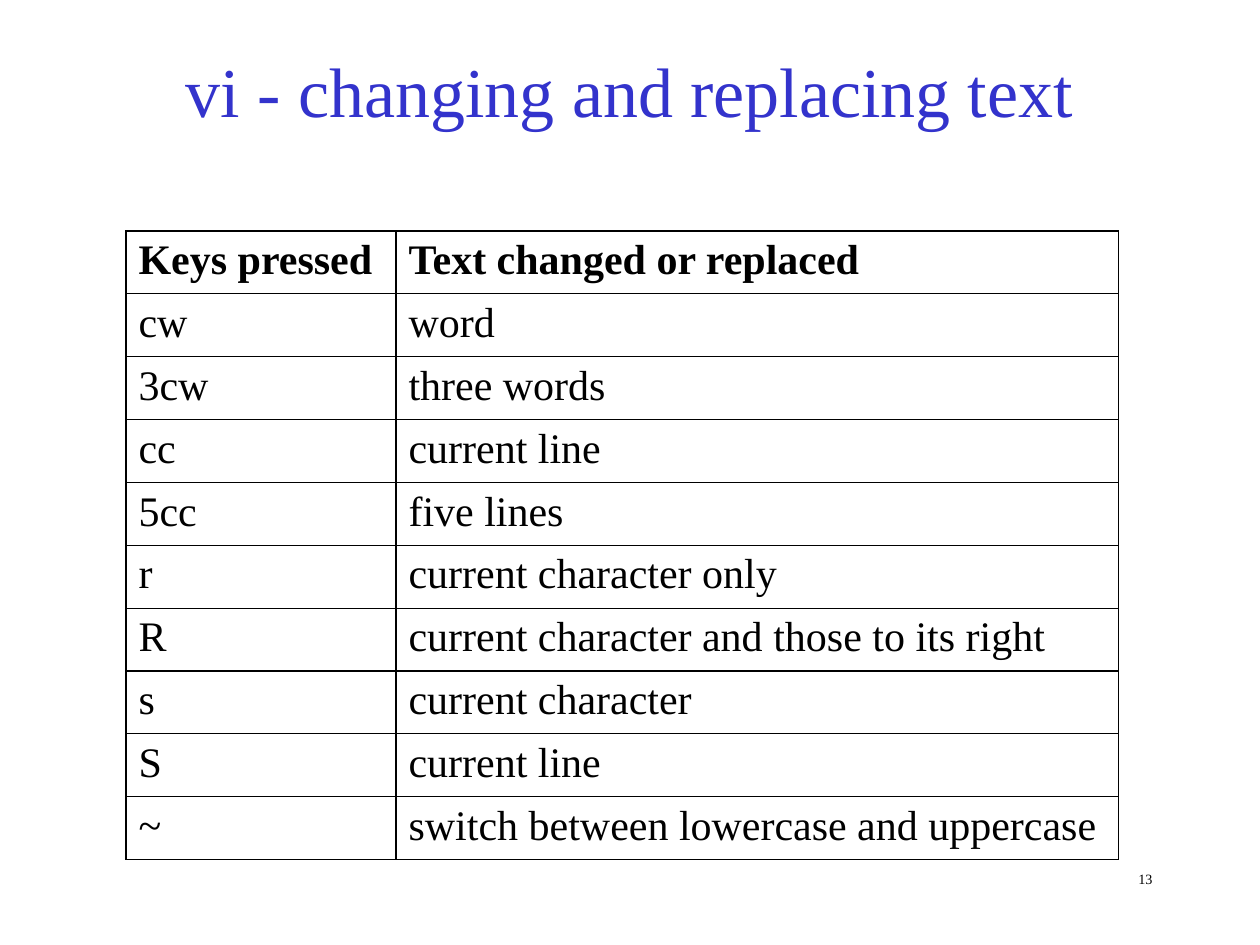
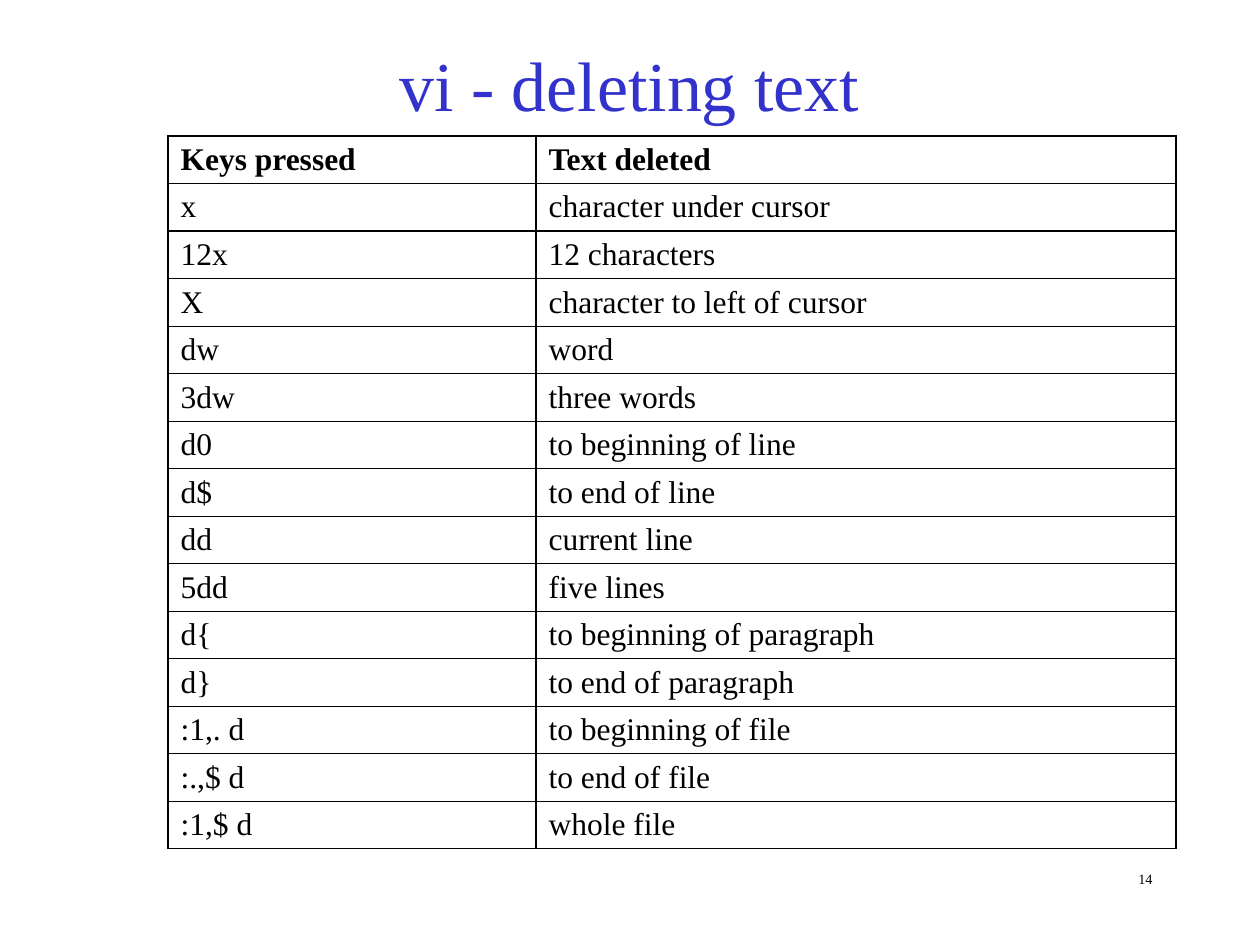
from lxml import etree
from pptx import Presentation
from pptx import util as u
from pptx.dml.color import RGBColor
from pptx.enum import text
from pptx.oxml.ns import qn

PX_PER_INCH = 126


def px(length):
    return u.Emu(round(length * 914400 / PX_PER_INCH))


def color(value):
    return RGBColor.from_string(value)


class KeyDeck:
    """Holds the shared style and the slide being filled."""
    FONT = "Times New Roman"
    INK = "000000"
    TITLE_INK = "3333CC"
    BORDER = u.Pt(0.75)
    HANGING = 47
    CELL_BOTTOM = 2

    def __init__(self):
        self.deck = Presentation()
        self.deck.slide_width, self.deck.slide_height = px(1260), px(945)
        self.slide = None

    def add_slide(self):
        self.slide = self.deck.slides.add_slide(self.deck.slide_layouts[5])

    def style(self, para, size, ink=INK, bold=False, align=text.PP_ALIGN.LEFT):
        para.alignment = align
        font = para.font
        font.name, font.size, font.bold = self.FONT, u.Pt(size), bold
        font.color.rgb = color(ink)

    def title(self, words, top, height):
        box = self.slide.shapes.title
        box.left, box.top, box.width, box.height = map(px, (94, top, 1071, height))
        frame = box.text_frame
        frame.text = words
        frame.auto_size = text.MSO_AUTO_SIZE.NONE
        frame.vertical_anchor = text.MSO_ANCHOR.MIDDLE
        self.style(frame.paragraphs[0], 40, self.TITLE_INK, align=text.PP_ALIGN.CENTER)

    def page_number(self, number):
        box = self.slide.shapes.add_textbox(*map(px, (903, 859, 262, 63)))
        box.text_frame.word_wrap = True
        para = box.text_frame.paragraphs[0]
        span = para.add_run()
        span.text = str(number)
        # Slightly raised, which also draws the digits small
        span.font._element.set("baseline", "20000")
        self.style(para, 14, align=text.PP_ALIGN.RIGHT)

    def table(self, rows, left, top, widths, height, size):
        frame = self.slide.shapes.add_table(
            len(rows), len(widths), px(left), px(top), px(sum(widths)), px(height))
        table = frame.table
        table.first_row = table.horz_banding = False
        for column, width in zip(table.columns, widths):
            column.width = px(width)
        for row_index, row in enumerate(rows):
            table.rows[row_index].height = px(height / len(rows))
            for column_index, words in enumerate(row):
                cell = table.cell(row_index, column_index)
                cell.text = words
                cell.margin_bottom = px(self.CELL_BOTTOM)
                para = cell.text_frame.paragraphs[0]
                self.style(para, size, bold=row_index == 0)
                self.hang(para)
                self.borders(cell)
                cell.fill.background()

    def hang(self, para):
        properties = para._p.get_or_add_pPr()
        properties.set("marL", str(px(self.HANGING)))
        properties.set("indent", str(-px(self.HANGING)))

    def borders(self, cell):
        properties = cell._tc.get_or_add_tcPr()
        for side in ("a:lnL", "a:lnR", "a:lnT", "a:lnB"):
            line = etree.SubElement(properties, qn(side), w=str(self.BORDER))
            fill = etree.SubElement(line, qn("a:solidFill"))
            etree.SubElement(fill, qn("a:srgbClr"), val=self.INK)


CHANGING = [
    ("Keys pressed", "Text changed or replaced"),
    ("cw", "word"),
    ("3cw", "three words"),
    ("cc", "current line"),
    ("5cc", "five lines"),
    ("r", "current character only"),
    ("R", "current character and those to its right"),
    ("s", "current character"),
    ("S", "current line"),
    ("~", "switch between lowercase and uppercase"),
]

DELETING = [
    ("Keys pressed", "Text deleted"),
    ("x", "character under cursor"),
    ("12x", "12 characters"),
    ("X", "character to left of cursor"),
    ("dw", "word"),
    ("3dw", "three words"),
    ("d0", "to beginning of line"),
    ("d$", "to end of line"),
    ("dd", "current line"),
    ("5dd", "five lines"),
    ("d{", "to beginning of paragraph"),
    ("d}", "to end of paragraph"),
    (":1,. d", "to beginning of file"),
    (":.,$ d", "to end of file"),
    (":1,$ d", "whole file"),
]


def main():
    pages = KeyDeck()

    pages.add_slide()
    pages.page_number(13)
    pages.table(CHANGING, 126, 231, (270, 723), 629, 24)
    pages.title("vi - changing and replacing text", 10, 158)

    pages.add_slide()
    pages.page_number(14)
    pages.table(DELETING, 168, 136, (368, 640), 713, 18)
    pages.title("vi - deleting text", 21, 126)

    pages.deck.save("out.pptx")


if __name__ == "__main__":
    main()
